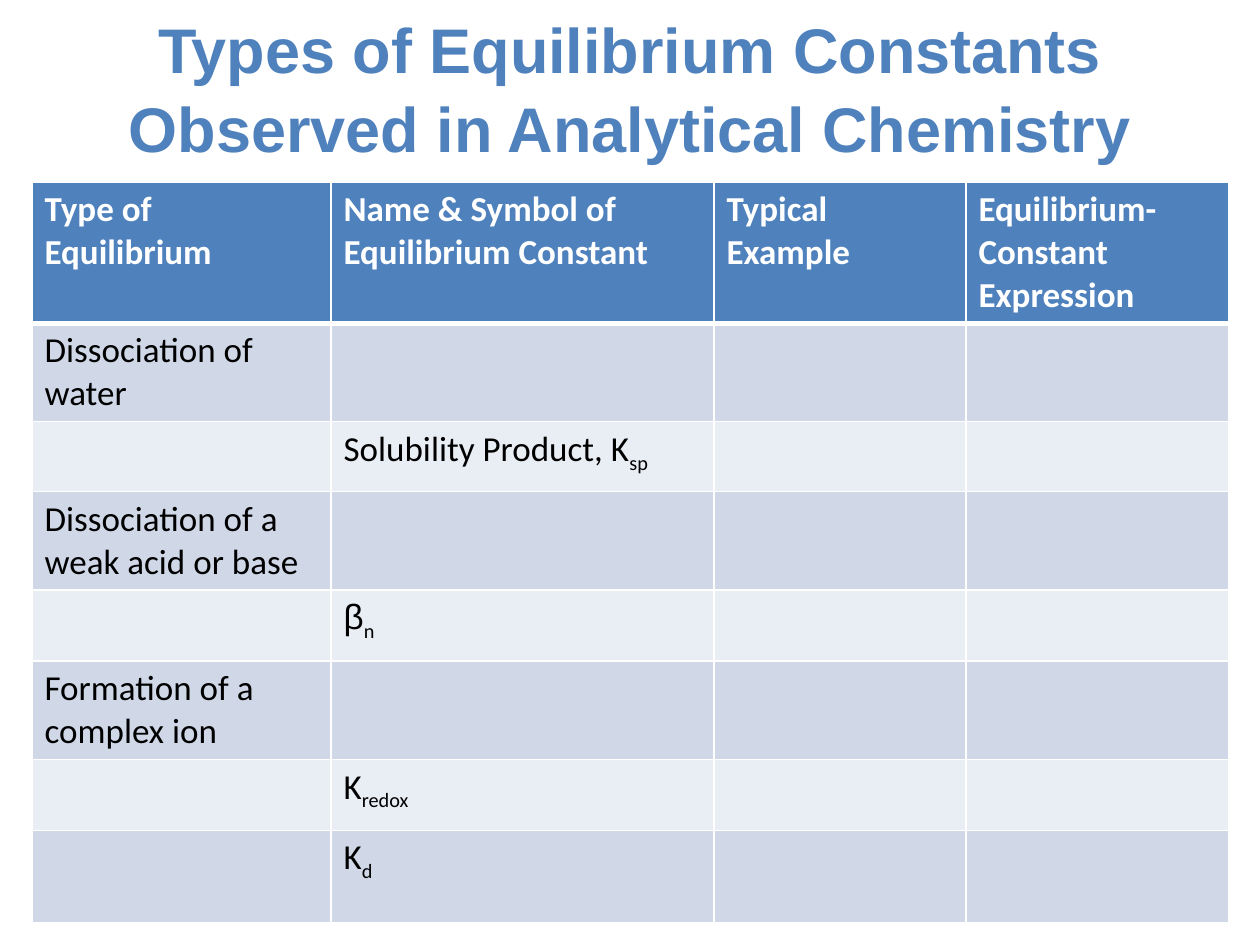
from dataclasses import dataclass

from lxml.etree import SubElement
from pptx import Presentation
from pptx.dml.color import RGBColor
from pptx.enum.text import MSO_ANCHOR, MSO_AUTO_SIZE, PP_ALIGN
from pptx.oxml.ns import qn
from pptx.util import Emu, Pt

PIXELS_PER_INCH = 126
COLORS = {
    "blue": "4F81BD",
    "odd_row": "D0D8E8",
    "even_row": "E9EDF4",
    "white": "FFFFFF",
    "black": "000000",
}
COLUMN_WIDTHS = [299, 383, 252, 263]
HEADINGS = [
    "Type of Equilibrium",
    "Name & Symbol of Equilibrium Constant",
    "Typical Example",
    "Equilibrium-Constant Expression",
]
HEADER_HEIGHT = 140


@dataclass(frozen=True)
class Equilibrium:
    height: int
    kind: str = ""
    symbol: str = ""
    subscript: str = ""
    symbol_font: str = "Calibri"


EQUILIBRIA = [
    Equilibrium(98, kind="Dissociation of water"),
    Equilibrium(70, symbol="Solubility Product, K", subscript="sp"),
    Equilibrium(98, kind="Dissociation of a weak acid or base"),
    Equilibrium(71, symbol="β", subscript="n", symbol_font="Arial"),
    Equilibrium(98, kind="Formation of a complex ion"),
    Equilibrium(71, symbol="K", subscript="redox"),
    Equilibrium(92, symbol="K", subscript="d"),
]


def px(length: int) -> Emu:
    return Emu(round(length * 914400 / PIXELS_PER_INCH))


def color(name: str) -> RGBColor:
    return RGBColor.from_string(COLORS[name])


def style_font(font, size: int, name: str, shade: str, bold: bool) -> None:
    font.size = Pt(size)
    font.name = name
    font.color.rgb = color(shade)
    font.bold = bold


def add_title(page, text: str) -> None:
    title = page.shapes.title
    title.left, title.top, title.width, title.height = px(0), px(21), px(1260), px(130)
    frame = title.text_frame
    frame.text = text
    frame.word_wrap = True
    frame.auto_size = MSO_AUTO_SIZE.NONE
    frame.vertical_anchor = MSO_ANCHOR.MIDDLE
    para = frame.paragraphs[0]
    para.alignment = PP_ALIGN.CENTER
    para.line_spacing = 1.05
    style_font(para.font, 36, "Arial", "blue", True)


def set_borders(cell, top: int, bottom: int) -> None:
    properties = cell._tc.get_or_add_tcPr()
    for side, width in {"L": 1, "R": 1, "T": top, "B": bottom}.items():
        line = SubElement(properties, qn(f"a:ln{side}"), w=str(Pt(width)))
        fill = SubElement(line, qn("a:solidFill"))
        SubElement(fill, qn("a:srgbClr"), val=COLORS["white"])


def style_cell(cell, row: int) -> None:
    set_borders(cell, top=3 if row == 1 else 1, bottom=3 if row == 0 else 1)
    cell.fill.solid()
    shade = "blue" if row == 0 else "odd_row" if row % 2 else "even_row"
    cell.fill.fore_color.rgb = color(shade)
    text_shade = "white" if row == 0 else "black"
    style_font(cell.text_frame.paragraphs[0].font, 20, "Calibri", text_shade, row == 0)


def write_symbol(cell, equilibrium: Equilibrium) -> None:
    para = cell.text_frame.paragraphs[0]
    span = para.add_run()
    span.text = equilibrium.symbol
    span.font.name = equilibrium.symbol_font
    subscript = para.add_run()
    subscript.text = equilibrium.subscript
    subscript._r.get_or_add_rPr().set("baseline", "-25000")


def add_equilibrium_table(page) -> None:
    heights = [HEADER_HEIGHT] + [item.height for item in EQUILIBRIA]
    table = page.shapes.add_table(
        len(heights), len(COLUMN_WIDTHS), px(32), px(182),
        px(sum(COLUMN_WIDTHS)), px(sum(heights)),
    ).table
    for column, width in zip(table.columns, COLUMN_WIDTHS):
        column.width = px(width)
    for row, height in zip(table.rows, heights):
        row.height = px(height)
    for column, heading in enumerate(HEADINGS):
        table.cell(0, column).text = heading
    for row, equilibrium in enumerate(EQUILIBRIA, start=1):
        if equilibrium.kind:
            table.cell(row, 0).text = equilibrium.kind
        if equilibrium.symbol:
            write_symbol(table.cell(row, 1), equilibrium)
    for row in range(len(heights)):
        for column in range(len(COLUMN_WIDTHS)):
            style_cell(table.cell(row, column), row)


def main() -> None:
    deck = Presentation()
    deck.slide_width, deck.slide_height = px(1260), px(945)
    page = deck.slides.add_slide(deck.slide_layouts.get_by_name("Title Only"))
    add_title(page, "Types of Equilibrium Constants Observed in Analytical Chemistry")
    add_equilibrium_table(page)
    deck.save("out.pptx")


if __name__ == "__main__":
    main()
